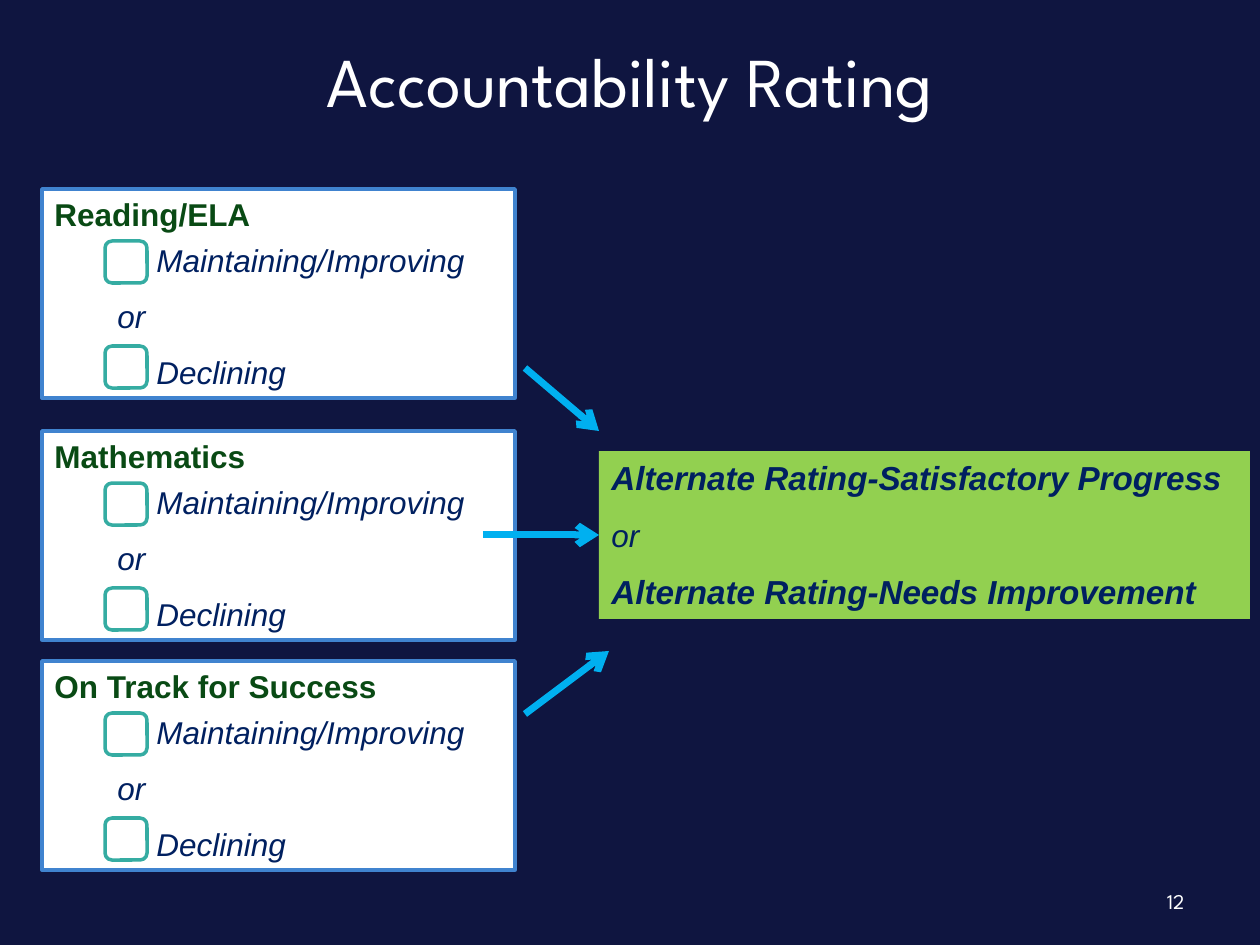
from lxml import etree
from pptx import Presentation
from pptx.dml.color import RGBColor
from pptx.enum.shapes import MSO_CONNECTOR as Connector, MSO_SHAPE as Shape
from pptx.enum.text import MSO_ANCHOR as Anchor, PP_ALIGN as Align
from pptx.oxml.ns import qn
from pptx.util import Emu, Pt

NAVY = RGBColor(0x0F, 0x15, 0x40)
WHITE = RGBColor(0xFF, 0xFF, 0xFF)
BLUE = RGBColor(0x40, 0x83, 0xCF)
TEAL = RGBColor(0x35, 0xAC, 0xA2)
DARK_GREEN = RGBColor(0x09, 0x4A, 0x14)
INK = RGBColor(0x00, 0x20, 0x60)
LIME = RGBColor(0x92, 0xD0, 0x50)
SKY = RGBColor(0x00, 0xB0, 0xF0)
HEADING_FONT, BODY_FONT = "League Spartan", "Arial"
PANEL_TOPS = {"Reading/ELA": 189, "Mathematics": 431, "On Track for Success": 661}


def px(length):
    """Turn pixels into EMU."""
    return Emu(round(length * 914400 / 126))


def style(paragraph, font_name, size, color, align=Align.LEFT, bold=False, italic=False):
    """Format a paragraph and all its runs."""
    paragraph.alignment = align
    for run in paragraph.runs:
        font = run.font
        font.name, font.size = font_name, Pt(size)
        font.bold, font.italic = bold, italic
        font.color.rgb = color


def space(paragraph, margin=0, indent=0, before=4.5, after=6):
    """Set the indents and the gaps around a paragraph."""
    properties = paragraph._p.get_or_add_pPr()
    properties.set("marL", str(px(margin)))
    properties.set("indent", str(px(indent)))
    paragraph.space_before, paragraph.space_after = Pt(before), Pt(after)


def add_box(slide, kind, box, fill, line=None):
    """Add a flat filled shape with an optional outline."""
    shape = slide.shapes.add_shape(kind, *map(px, box))
    shape.shadow.inherit = False
    shape.fill.solid()
    shape.fill.fore_color.rgb = fill
    if line is None:
        shape.line.fill.background()
    else:
        shape.line.color.rgb = line
        shape.line.width = Pt(2)
    shape.text_frame.word_wrap = True
    shape.text_frame.vertical_anchor = Anchor.TOP
    return shape


def add_title(slide, box, text):
    """Place the slide title."""
    title = slide.shapes.title
    title.left, title.top, title.width, title.height = map(px, box)
    title.text_frame.text = text
    title.text_frame.vertical_anchor = Anchor.MIDDLE
    style(title.text_frame.paragraphs[0], HEADING_FONT, 40, WHITE, Align.CENTER)


def add_panel(slide, box, subject):
    """Add a subject panel with two checkbox options."""
    left, top = box[:2]
    panel = add_box(slide, Shape.RECTANGLE, box, WHITE, BLUE)
    panel.text_frame.text = f"{subject}\nMaintaining/Improving\nor\nDeclining"
    heading, *options = panel.text_frame.paragraphs
    style(heading, BODY_FONT, 18, DARK_GREEN, bold=True)
    for option in options:
        space(option, margin=102, indent=-39 if option.text == "or" else 0)
        style(option, BODY_FONT, 18, INK, italic=True)
    for offset in (52, 157):
        add_box(slide, Shape.ROUNDED_RECTANGLE, (left + 63, top + offset, 42, 42), WHITE, TEAL)


def add_rating(slide, box):
    """Add the box with the two possible ratings."""
    rating = add_box(slide, Shape.RECTANGLE, box, LIME)
    rating.text_frame.text = ("Alternate Rating-Satisfactory Progress\nor\n"
                              "Alternate Rating-Needs Improvement")
    for index, paragraph in enumerate(rating.text_frame.paragraphs):
        joiner = paragraph.text == "or"
        space(paragraph, margin=39, indent=-39, before=4.5 if index else 0)
        style(paragraph, BODY_FONT, 18 if joiner else 19, INK, bold=not joiner, italic=True)
    return rating


def add_arrow(slide, start, end):
    """Add a straight arrow between two points."""
    arrow = slide.shapes.add_connector(Connector.STRAIGHT, *map(px, start + end))
    arrow.line.color.rgb = SKY
    arrow.line.width = Pt(4)
    etree.SubElement(arrow.line._get_or_add_ln(), qn("a:tailEnd"), type="arrow")
    etree.SubElement(arrow._element.spPr, qn("a:effectLst"))
    return arrow


def add_slide_number(slide, box, number):
    """Add the slide number at the lower right."""
    frame = slide.shapes.add_textbox(*map(px, box)).text_frame
    frame.word_wrap = True
    frame.vertical_anchor = Anchor.MIDDLE
    frame.text = number
    style(frame.paragraphs[0], HEADING_FONT, 12, WHITE, Align.RIGHT)


def main():
    """Build the slide and save it."""
    presentation = Presentation()
    presentation.slide_width, presentation.slide_height = px(1260), px(945)
    slide = presentation.slides.add_slide(presentation.slide_layouts[5])
    slide.background.fill.solid()
    slide.background.fill.fore_color.rgb = NAVY
    add_title(slide, (0, 0, 1260, 158), "Accountability Rating")
    for subject, top in PANEL_TOPS.items():
        add_panel(slide, (42, top, 473, 209), subject)
    rating = add_rating(slide, (599, 451, 651, 168))
    add_arrow(slide, (525, 368), (599, 431))
    add_arrow(slide, (483, 535), (599, 535)).end_connect(rating, 1)
    add_arrow(slide, (525, 714), (609, 651))
    add_slide_number(slide, (903, 876, 294, 50), "12")
    presentation.save("out.pptx")


if __name__ == "__main__":
    main()
